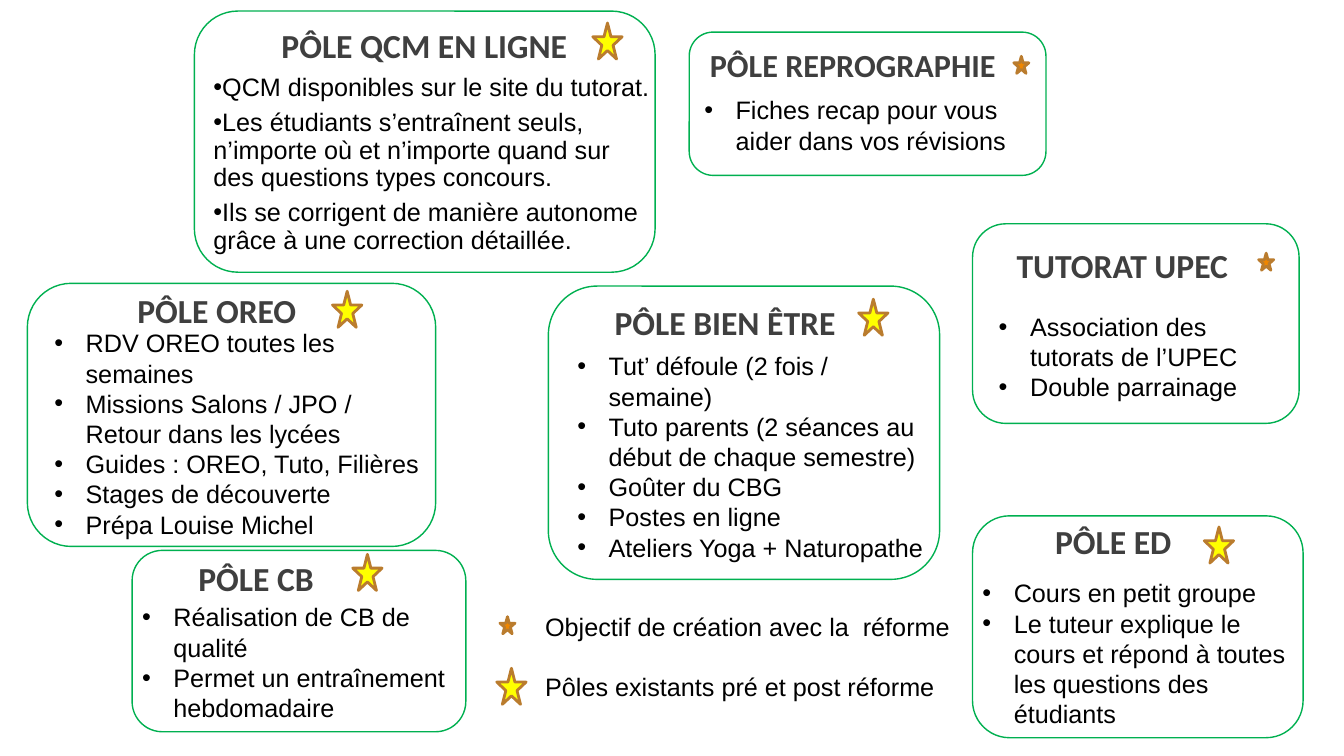
"""Build the slide that presents the tutoring groups."""
import dataclasses

import lxml.etree
import pptx
import pptx.dml.color
import pptx.enum.shapes
import pptx.enum.text
import pptx.oxml.ns
import pptx.util

Cm = pptx.util.Cm
Pt = pptx.util.Pt
RGBColor = pptx.dml.color.RGBColor
SHAPES = pptx.enum.shapes.MSO_SHAPE
ALIGN = pptx.enum.text.PP_ALIGN

BLACK = RGBColor(0x00, 0x00, 0x00)
GREY = RGBColor(0x3F, 0x3F, 0x3F)
GREEN = RGBColor(0x00, 0xB0, 0x50)
YELLOW = RGBColor(0xFF, 0xFF, 0x00)
ORANGE = RGBColor(0xEF, 0x86, 0x00)
BRONZE = RGBColor(0xBA, 0x7C, 0x2E)

EXISTING = (0.74, 0.91, YELLOW)
PLANNED = (0.38, 0.43, ORANGE)


@dataclasses.dataclass
class Pole:
    """Hold the wording and the places, in centimetres, of one group."""

    title: str
    items: list
    frame: tuple
    title_place: tuple
    body_place: tuple
    star_place: tuple
    star: tuple = EXISTING
    size: int = 24
    align: ALIGN = ALIGN.LEFT
    compact: bool = False


POLES = [
    Pole("PÔLE QCM EN LIGNE ",
         ["QCM disponibles sur le site du tutorat.",
          "Les étudiants s’entraînent seuls, n’importe où et n’importe quand "
          "sur des questions types concours.",
          "Ils se corrigent de manière autonome grâce à une correction détaillée."],
         (4.9, 0.28, 11.61, 6.58), (6.27, 0.51, 9.04, 1.27),
         (5.13, 1.75, 11.68, 4.85), (14.94, 0.58),
         align=ALIGN.CENTER, compact=True),
    Pole("PÔLE REPROGRAPHIE ",
         ["Fiches recap pour vous aider dans vos révisions"],
         (17.37, 0.81, 8.99, 3.61), (16.66, 1.02, 9.86, 1.24),
         (17.5, 2.26, 9.04, 2.16), (25.55, 1.42),
         star=PLANNED, size=23, align=ALIGN.CENTER),
    Pole("PÔLE OREO ",
         ["RDV OREO toutes les semaines",
          "Missions Salons / JPO / Retour dans les lycées",
          "Guides : OREO, Tuto, Filières",
          "Stages de découverte",
          "Prépa Louise Michel"],
         (0.69, 7.14, 10.29, 6.63), (-0.18, 7.19, 11.48, 1.27),
         (1.12, 8.13, 9.86, 4.88), (8.38, 7.34), align=ALIGN.CENTER),
    Pole("PÔLE BIEN ÊTRE",
         ["Tut’ défoule (2 fois / semaine)",
          "Tuto parents (2 séances au début de chaque semestre)",
          "Goûter du CBG",
          "Postes en ligne",
          "Ateliers Yoga + Naturopathe"],
         (13.82, 7.21, 9.86, 7.39), (15.24, 7.49, 9.68, 1.27),
         (14.3, 8.71, 9.58, 5.03), (21.64, 7.54)),
    Pole("PÔLE CB ",
         ["Réalisation de CB de qualité",
          "Permet un entraînement hebdomadaire"],
         (3.33, 13.87, 8.41, 4.57), (4.75, 13.94, 9.12, 1.27),
         (3.33, 15.04, 8.76, 3.33), (8.89, 13.97)),
    Pole("PÔLE ED",
         ["Cours en petit groupe",
          "Le tuteur explique le cours et répond à toutes les questions des étudiants"],
         (24.51, 13, 8.33, 5.59), (26.34, 13, 3.68, 1.27),
         (24.51, 14.43, 8.51, 3.28), (30.35, 13.28)),
    Pole("TUTORAT UPEC",
         ["Association des tutorats de l’UPEC", "Double parrainage"],
         (24.51, 5.64, 8.23, 5.03), (25.37, 6.05, 9.68, 1.27),
         (24.92, 7.72, 7.82, 2.97), (31.72, 6.38), star=PLANNED),
]


def add_text(page, place, lines, font="Arial", size=18, color=BLACK, bold=False):
    """Add a wrapped text box and return its paragraphs."""
    frame = page.shapes.add_textbox(*map(Cm, place)).text_frame
    frame.word_wrap = True
    frame.text = "\n".join(lines)
    for para in frame.paragraphs:
        for span in para.runs:
            span.font.name = font
            span.font.size = Pt(size)
            span.font.bold = bold
            span.font.color.rgb = color
    return frame.paragraphs


def add_bullet(para, margin, indent):
    """Give a paragraph a black round bullet and a hanging indent."""
    properties = para._p.get_or_add_pPr()
    properties.set("marL", str(Cm(margin)))
    properties.set("indent", str(Cm(indent)))
    qn = pptx.oxml.ns.qn
    color = lxml.etree.SubElement(properties, qn("a:buClr"))
    lxml.etree.SubElement(color, qn("a:srgbClr"), val=str(BLACK))
    lxml.etree.SubElement(properties, qn("a:buFont"), typeface="Arial")
    lxml.etree.SubElement(properties, qn("a:buChar"), char="•")


def add_body(page, pole):
    """Add the bulleted list of a group."""
    for index, para in enumerate(add_text(page, pole.body_place, pole.items)):
        if pole.compact:
            para.line_spacing = 0.9
            para.space_before = Pt(6 if index else 0)
            add_bullet(para, 0, -0.32)
        else:
            add_bullet(para, 0.79, -0.79)


def add_outline(page, kind, place, color, width):
    """Add an unfilled preset shape with a coloured outline."""
    shape = page.shapes.add_shape(kind, *map(Cm, place))
    shape.shadow.inherit = False
    shape.fill.background()
    shape.line.color.rgb = color
    shape.line.width = Pt(width)
    return shape


def add_star(page, place, star):
    """Add the star that tells existing groups from planned ones."""
    width, height, color = star
    shape = add_outline(page, SHAPES.STAR_5_POINT, (*place, width, height), BRONZE, 2)
    shape.fill.solid()
    shape.fill.fore_color.rgb = color


def add_pole(page, pole):
    """Add the frame, title, list and star of a group."""
    add_outline(page, SHAPES.FLOWCHART_ALTERNATE_PROCESS, pole.frame, GREEN, 1)
    title = add_text(page, pole.title_place, [pole.title], "Calibri", pole.size, GREY, True)
    title[0].alignment = pole.align
    add_body(page, pole)
    add_star(page, pole.star_place, pole.star)


def add_legend(page):
    """Add the key to the two stars."""
    lines = ["Objectif de création avec la  réforme", "Pôles existants pré et post réforme"]
    paras = add_text(page, (13.49, 15.27, 10.85, 2.57), lines)
    paras[1].space_before = Pt(21.6)
    add_star(page, (12.6, 15.54), PLANNED)
    add_star(page, (12.52, 16.84), EXISTING)


def main():
    """Build and save the deck."""
    deck = pptx.Presentation()
    deck.slide_width, deck.slide_height = Cm(33.87), Cm(19.05)
    page = deck.slides.add_slide(deck.slide_layouts[6])
    for pole in POLES:
        add_pole(page, pole)
    add_legend(page)
    deck.save("out.pptx")


if __name__ == "__main__":
    main()
